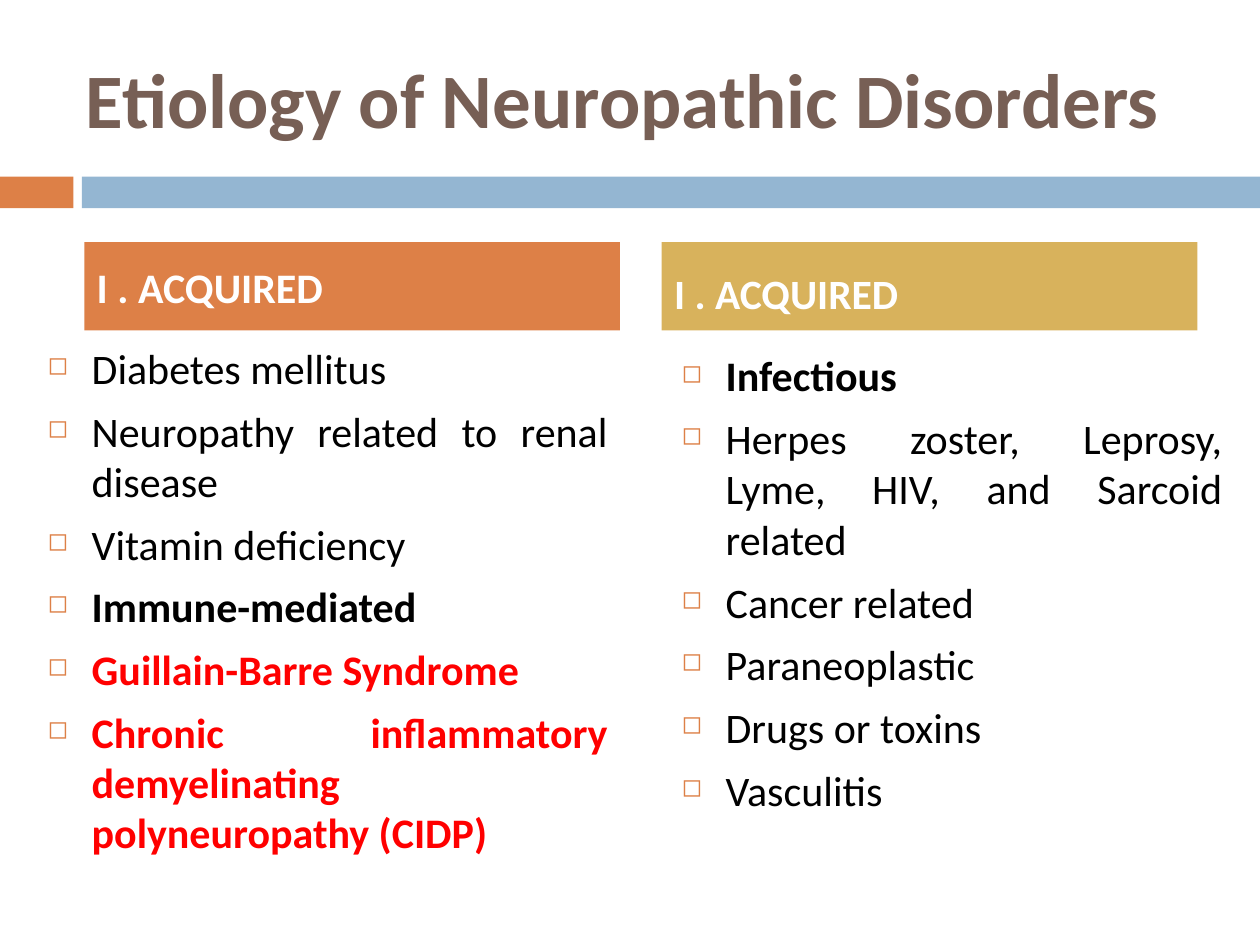
from lxml import etree
from pptx import Presentation
from pptx.dml.color import RGBColor
from pptx.enum import shapes, text
from pptx.oxml.ns import qn
from pptx.util import Cm, Pt

ORANGE = RGBColor(0xDD, 0x80, 0x47)
BLUE = RGBColor(0x94, 0xB6, 0xD2)
GOLD = RGBColor(0xD8, 0xB2, 0x5C)
BROWN = RGBColor(0x77, 0x5F, 0x55)
BLACK = RGBColor(0, 0, 0)
RED = RGBColor(0xFF, 0, 0)
WHITE = RGBColor(0xFF, 0xFF, 0xFF)

ACQUIRED = [
    ("Diabetes mellitus", {}),
    ("Neuropathy related to renal disease", {}),
    ("Vitamin deficiency", {}),
    ("Immune-mediated", {"bold": True}),
    ("Guillain-Barre Syndrome", {"bold": True, "color": RED}),
    ("Chronic inflammatory demyelinating polyneuropathy (CIDP)",
     {"bold": True, "color": RED}),
]
ACQUIRED_CONTINUED = [
    ("Infectious", {"bold": True}),
    ("Herpes zoster, Leprosy, Lyme, HIV, and Sarcoid related", {}),
    ("Cancer related", {}),
    ("Paraneoplastic", {}),
    ("Drugs or toxins", {}),
    ("Vasculitis", {}),
]


def write(paragraph, wording, size=24, color=BLACK, bold=False,
          align=text.PP_ALIGN.LEFT):
    paragraph.alignment = align
    run = paragraph.add_run()
    run.text = wording
    run.font.name = "Calibri"
    run.font.size = Pt(size)
    run.font.bold = bold
    run.font.color.rgb = color


def add_bullet(paragraph):
    properties = paragraph._p.get_or_add_pPr()
    properties.set("marL", str(Cm(0.89)))
    properties.set("indent", str(-Cm(0.89)))
    tint = etree.SubElement(properties, qn("a:buClr"))
    etree.SubElement(tint, qn("a:srgbClr"), val=str(ORANGE))
    etree.SubElement(properties, qn("a:buSzPct"), val="60000")
    etree.SubElement(properties, qn("a:buChar"), char="◻")


def add_band(slide, left, top, width, height, color):
    band = slide.shapes.add_shape(
        shapes.MSO_SHAPE.RECTANGLE, Cm(left), Cm(top), Cm(width), Cm(height))
    band.shadow.inherit = False
    band.fill.solid()
    band.fill.fore_color.rgb = color
    band.line.fill.background()
    return band


def add_heading(slide, left, color, size=24, top_inset=0.13):
    frame = add_band(slide, left, 4.88, 10.8, 1.78, color).text_frame
    frame.vertical_anchor = text.MSO_ANCHOR.MIDDLE
    frame.margin_top = Cm(top_inset)
    write(frame.paragraphs[0], "I . ACQUIRED", size=size, color=WHITE, bold=True)


def add_list(slide, left, top, width, height, causes):
    frame = slide.shapes.add_textbox(
        Cm(left), Cm(top), Cm(width), Cm(height)).text_frame
    frame.word_wrap = True
    for index, (cause, style) in enumerate(causes):
        paragraph = frame.add_paragraph() if index else frame.paragraphs[0]
        write(paragraph, cause, align=text.PP_ALIGN.JUSTIFY, **style)
        paragraph.space_before = Pt(7)
        add_bullet(paragraph)


def set_title(slide, wording):
    title = slide.shapes.title
    title.left, title.top = Cm(1.47), Cm(0.76)
    title.width, title.height = Cm(22.66), Cm(2.41)
    title.text_frame.vertical_anchor = text.MSO_ANCHOR.MIDDLE
    write(title.text_frame.paragraphs[0], wording, size=44, color=BROWN, bold=True)


def main():
    deck = Presentation()
    deck.slide_width, deck.slide_height = Cm(25.4), Cm(19.05)
    slide = deck.slides.add_slide(deck.slide_layouts[5])
    add_band(slide, 0, 3.56, 1.48, 0.64, ORANGE)
    add_band(slide, 1.65, 3.56, 23.75, 0.64, BLUE)
    set_title(slide, "Etiology of Neuropathic Disorders")
    add_list(slide, 0.71, 6.78, 11.79, 11.35, ACQUIRED)
    add_list(slide, 13.49, 6.93, 11.4, 11.76, ACQUIRED_CONTINUED)
    add_heading(slide, 1.7, ORANGE)
    add_heading(slide, 13.34, GOLD, size=23.8, top_inset=0.38)
    deck.save("out.pptx")


if __name__ == "__main__":
    main()
